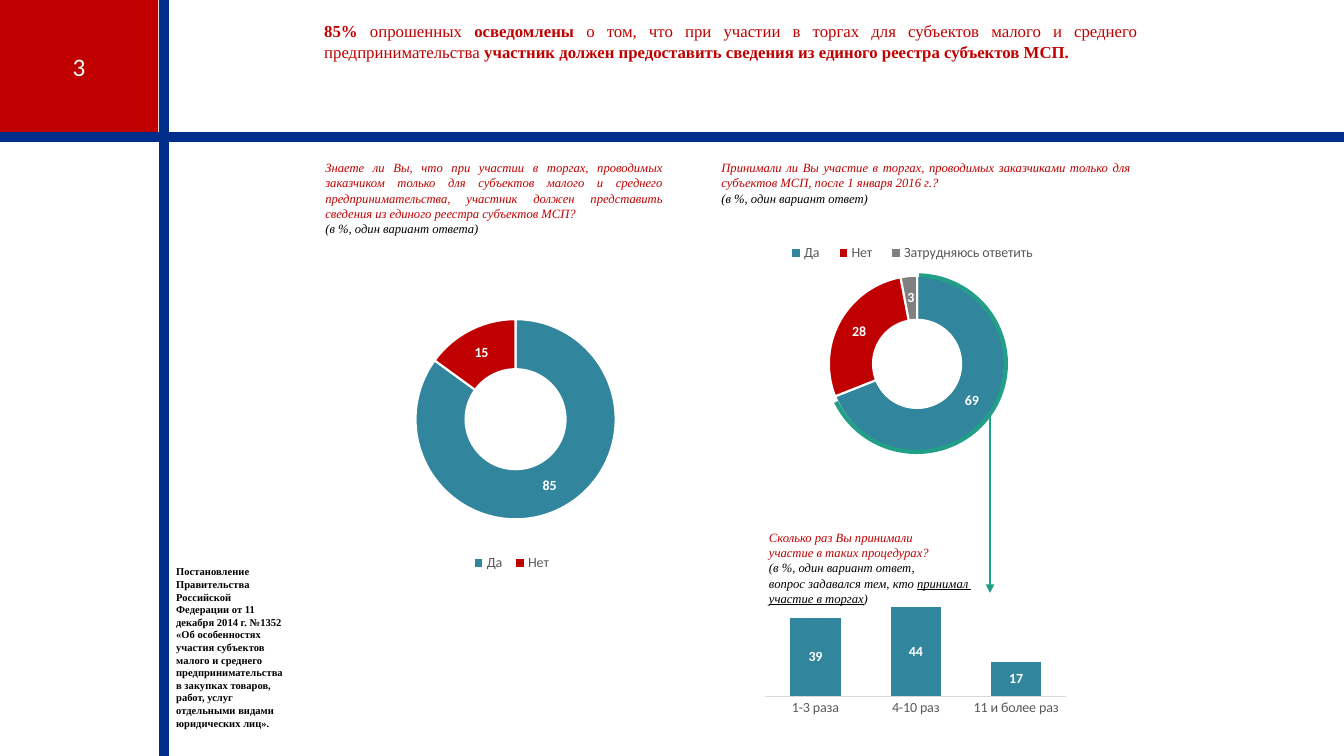
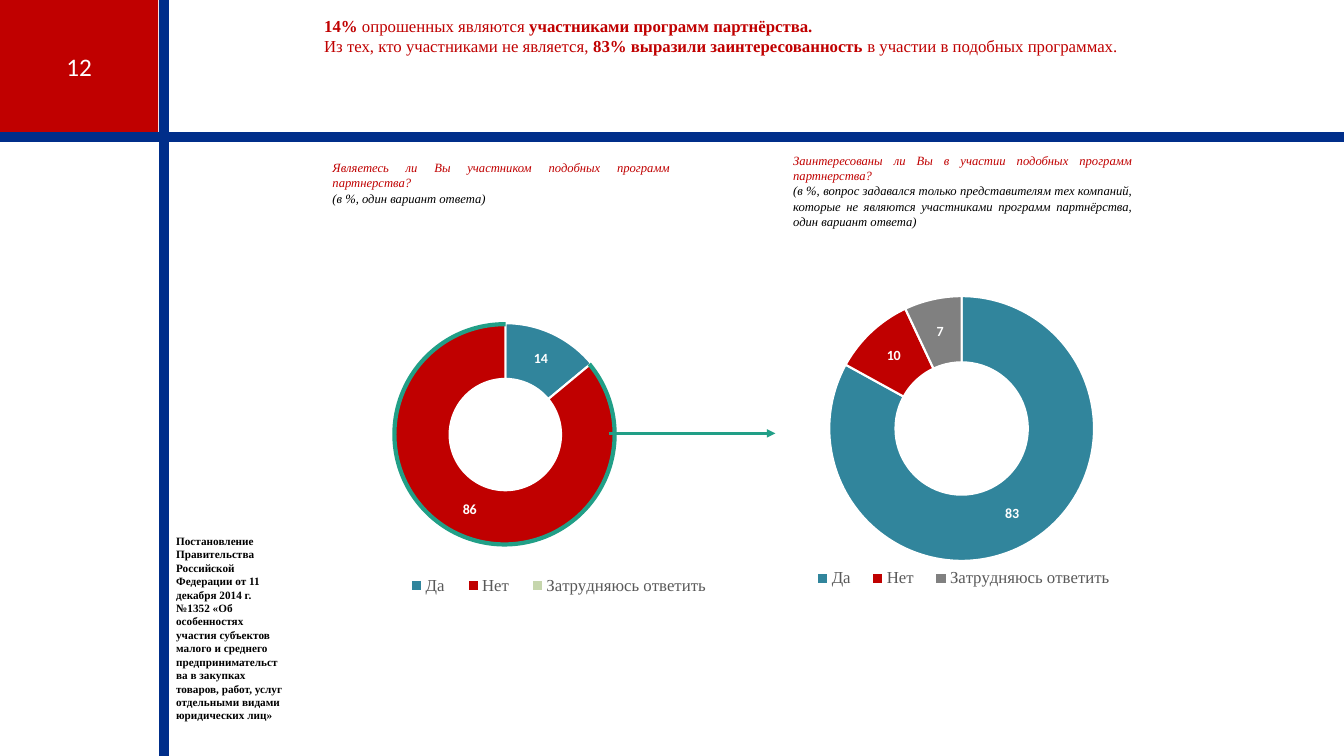
from pptx import Presentation
from pptx import util as u
from pptx.chart import data as chart_data
from pptx.dml import color
from pptx.enum import chart as chart_enum
from pptx.enum import shapes, text
from pptx.oxml import ns, parse_xml

COLOURS = {
    "red": "C00000", "blue": "002E8A", "teal": "31859C", "green": "219F87",
    "grey": "808080", "pale": "C6D6AD", "label": "595959", "axis": "D9D9D9",
    "white": "FFFFFF", "black": "000000",
}
SERIF, SANS = "Times New Roman", "Calibri"
WIDTH, HEIGHT = 33.87, 19.05
BAND_X, BAND_Y = 4.14, 3.45
ANSWERS = ("Да", "Нет", "Затрудняюсь ответить")
ONE_ANSWER = "(в %, один вариант ответа)"
DECREE = (
    "Постановление Правительства Российской Федерации от 11 декабря 2014 г. "
    "№1352 «Об особенностях участия субъектов малого и среднего "
    "предпринимательства в закупках товаров, работ, услуг отдельными видами "
    "юридических лиц»"
)


def rgb(name):
    return color.RGBColor.from_string(COLOURS[name])


def cm(values):
    return [u.Cm(value) for value in values]


def style_font(font, name, size, colour, bold=False):
    font.name, font.size, font.bold = name, u.Pt(size), bold
    font.color.rgb = rgb(colour)


def fill_solid(fill, colour):
    fill.solid()
    fill.fore_color.rgb = rgb(colour)


def style_line(line, colour, width):
    line.color.rgb = rgb(colour)
    line.width = u.Pt(width)


def add_text(slide, box, paras, size, align=text.PP_ALIGN.JUSTIFY, italic=False):
    """Each paragraph is a list of (words, colour, marks); marks hold b and u."""
    shape = slide.shapes.add_textbox(*cm(box))
    frame = shape.text_frame
    frame.word_wrap = True
    frame.auto_size = text.MSO_AUTO_SIZE.SHAPE_TO_FIT_TEXT
    for index, spans in enumerate(paras):
        para = frame.add_paragraph() if index else frame.paragraphs[0]
        para.alignment = align
        for words, colour, marks in spans:
            span = para.add_run()
            span.text = words
            style_font(span.font, SERIF, size, colour, "b" in marks)
            span.font.italic = italic
            span.font.underline = "u" in marks


def add_line(slide, start, end, colour, width, arrow=False):
    line = slide.shapes.add_connector(
        shapes.MSO_CONNECTOR.STRAIGHT, *cm(start), *cm(end))
    style_line(line.line, colour, width)
    properties = line.element.xpath("p:spPr")[0]
    if arrow:
        properties.find(ns.qn("a:ln")).append(parse_xml(
            f'<a:tailEnd {ns.nsdecls("a")} type="triangle"/>'))
    properties.append(parse_xml(f'<a:effectLst {ns.nsdecls("a")}/>'))


def add_frame(slide, number):
    """Number block and the two crossing bands."""
    block = slide.shapes.add_shape(
        shapes.MSO_SHAPE.RECTANGLE, *cm((0, 0, 3.99, 3.35)))
    block.shadow.inherit = False
    fill_solid(block.fill, "red")
    block.line.fill.background()
    block.text_frame.vertical_anchor = text.MSO_ANCHOR.MIDDLE
    para = block.text_frame.paragraphs[0]
    para.alignment = text.PP_ALIGN.CENTER
    span = para.add_run()
    span.text = number
    style_font(span.font, SANS, 18, "white")
    add_line(slide, (BAND_X, 0), (BAND_X, HEIGHT), "blue", 7)
    add_line(slide, (0, BAND_Y), (WIDTH, BAND_Y), "blue", 7)


def add_headline(slide, top, paras):
    """Spans of a headline are (words, marks)."""
    add_text(slide, (7.92, top, 21.01, 1.27),
             [[(words, "red", marks) for words, marks in spans]
              for spans in paras], 12)


def add_question(slide, box, question, hint):
    add_text(slide, box, [[(question, "red", "")], [(hint, "black", "")]],
             9, italic=True)


def add_decree(slide, box, words, size):
    add_text(slide, box, [[(words, "black", "b")]], size, text.PP_ALIGN.LEFT)


def set_layout(parent, index, box, target=""):
    """Place a plot area or legend; box holds fractions of its chart."""
    for old in parent.findall(ns.qn("c:layout")):
        parent.remove(old)
    modes = "".join(f'<c:{key}Mode val="edge"/>' for key in "xy")
    values = "".join(
        f'<c:{key} val="{value}"/>' for key, value in zip("xywh", box))
    parent.insert(index, parse_xml(
        f'<c:layout {ns.nsdecls("c")}><c:manualLayout>{target}{modes}{values}'
        "</c:manualLayout></c:layout>"))


def add_chart(slide, kind, box, names, values, plot_box):
    source = chart_data.CategoryChartData(number_format="#,##0")
    source.categories = names
    source.add_series("Series 1", values)
    chart = slide.shapes.add_chart(kind, *cm(box), source).chart
    chart.has_title = False
    chart.has_legend = False
    style_font(chart.font, SANS, 10, "black")
    plot = chart.plots[0]
    plot.has_data_labels = True
    labels = plot.data_labels
    labels.show_value = True
    labels.show_percentage = False
    labels.number_format = "#,##0;;"
    labels.number_format_is_linked = False
    style_font(labels.font, SANS, 10, "white", True)
    set_layout(chart.element.xpath("c:chart/c:plotArea")[0], 0, plot_box,
               '<c:layoutTarget val="inner"/>')
    return chart


def add_doughnut(slide, box, values, plot_box, legend_box, legend_font,
                 colours=("teal", "red", "grey")):
    chart = add_chart(slide, chart_enum.XL_CHART_TYPE.DOUGHNUT, box,
                      ANSWERS[:len(values)], values, plot_box)
    plot = chart.plots[0]
    plot.vary_by_categories = True
    chart.element.xpath(".//c:holeSize")[0].set("val", "45")
    for index, colour in enumerate(colours[:len(values)]):
        point = plot.series[0].points[index].format
        fill_solid(point.fill, colour)
        style_line(point.line, "white", 1.5)
    chart.has_legend = True
    legend = chart.legend
    legend.position = chart_enum.XL_LEGEND_POSITION.BOTTOM
    legend.include_in_layout = False
    style_font(legend.font, *legend_font, "label")
    set_layout(chart.element.xpath("c:chart/c:legend")[0], 1, legend_box)


def add_columns(slide, box, names, values):
    chart = add_chart(slide, chart_enum.XL_CHART_TYPE.COLUMN_STACKED, box,
                      names, values, (0.02, 0.02, 0.96, 0.8))
    plot = chart.plots[0]
    plot.vary_by_categories = False
    plot.gap_width = plot.overlap = 100
    plot.data_labels.position = chart_enum.XL_LABEL_POSITION.CENTER
    fill_solid(plot.series[0].format.fill, "teal")
    chart.value_axis.visible = False
    chart.value_axis.has_major_gridlines = False
    chart.value_axis.minimum_scale = 0
    chart.value_axis.maximum_scale = 50
    axis = chart.category_axis
    axis.major_tick_mark = chart_enum.XL_TICK_MARK.NONE
    style_font(axis.tick_labels.font, SANS, 10, "label")
    style_line(axis.format.line, "axis", 0.75)


def add_callout(slide, box, ring, angles, start, end):
    """Outline one slice of the chart in box and lead an arrow away from it."""
    left, top = box[:2]
    add_line(slide, (left + start[0], top + start[1]),
             (left + end[0], top + end[1]), "green", 2, arrow=True)
    x, y, width, height = ring
    arc = slide.shapes.add_shape(
        shapes.MSO_SHAPE.ARC, *cm((left + x, top + y, width, height)))
    arc.shadow.inherit = False
    arc.fill.background()
    style_line(arc.line, "green", 3)
    for index, angle in enumerate(angles):
        arc.adjustments[index] = angle * 0.6


def build_awareness(slide):
    add_frame(slide, "3")
    add_headline(slide, 0.41, [[
        ("85%", "b"), (" опрошенных ", ""), ("осведомлены", "b"),
        (" о том, что при участии в торгах для субъектов малого и среднего "
         "предпринимательства ", ""),
        ("участник должен предоставить сведения из единого реестра "
         "субъектов МСП.", "b")]])
    add_doughnut(slide, (7.95, 7.67, 9.7, 7.24), (85, 15),
                 (0.26, 0.05, 0.52, 0.7), (0.39, 0.85, 0.24, 0.1), (SANS, 10))
    participation = (18.75, 5.87, 8.23, 6.35)
    add_doughnut(slide, participation, (69, 28, 3),
                 (0.26, 0.16, 0.54, 0.72), (0.1, 0.02, 0.83, 0.12), (SANS, 10))
    add_columns(slide, (19.13, 14.94, 7.9, 3.18),
                ("1-3 раза", "4-10 раз", "11 и более раз"), (39, 44, 17))
    add_callout(slide, participation, (2.1, 1.07, 4.5, 4.45), (271.6, 154.6),
                (6.2, 4.45), (6.2, 9.07))
    add_question(
        slide, (7.95, 3.91, 8.99, 2.18),
        "Знаете ли Вы, что при участии в торгах, проводимых заказчиком только "
        "для субъектов малого и среднего предпринимательства, участник должен "
        "представить сведения из единого реестра субъектов МСП?", ONE_ANSWER)
    add_question(
        slide, (17.93, 3.91, 10.8, 1.42),
        "Принимали ли Вы участие в торгах, проводимых заказчиками только для "
        "субъектов МСП, после 1 января 2016 г.?", "(в %, один вариант ответ)")
    add_text(slide, (19.13, 13.23, 11, 2.18), [
        [("Сколько раз Вы принимали", "red", "")],
        [("участие в таких процедурах?", "red", "")],
        [("(в %, один вариант ответ,", "black", "")],
        [("вопрос задавался тем, кто ", "black", ""),
         ("принимал ", "black", "u")],
        [("участие в торгах", "black", "u"), (")", "black", "")],
    ], 9, text.PP_ALIGN.LEFT, italic=True)
    add_decree(slide, (4.19, 14.12, 3.23, 4.42), DECREE + ".", 7.5)


def build_partnership(slide):
    add_frame(slide, "12")
    add_headline(slide, 0.28, [
        [("14% ", "b"), ("опрошенных являются ", ""),
         ("участниками программ партнёрства.", "b")],
        [("Из тех, кто участниками не является, ", ""),
         ("83% выразили заинтересованность ", "b"),
         ("в участии в подобных программах.", "")]])
    membership = (8.74, 7.14, 10.8, 8.2)
    add_doughnut(slide, membership, (14, 86, 0),
                 (0.11, 0.12, 0.52, 0.69), (0.11, 0.88, 0.77, 0.1), (SERIF, 12),
                 ("teal", "red", "pale"))
    add_doughnut(slide, (19.18, 7.11, 10.11, 8.2), (83, 10, 7),
                 (0.17, 0.04, 0.66, 0.82), (0.1, 0.86, 0.81, 0.1), (SERIF, 12))
    add_callout(slide, membership, (1.2, 1.03, 5.55, 5.55), (320.3, 270.6),
                (6.6, 3.78), (10.8, 3.78))
    add_question(
        slide, (8.13, 3.91, 8.99, 1.42),
        "Являетесь ли Вы участником подобных программ партнерства?", ONE_ANSWER)
    add_question(
        slide, (19.74, 3.73, 9.03, 2.18),
        "Заинтересованы ли Вы в участии подобных программ партнерства?",
        "(в %, вопрос задавался только представителям тех компаний, которые не "
        "являются участниками программ партнёрства, один вариант ответа)")
    add_decree(slide, (4.19, 13.34, 3.2, 5.38), DECREE, 8)


def main():
    deck = Presentation()
    deck.slide_width, deck.slide_height = cm((WIDTH, HEIGHT))
    for build in (build_awareness, build_partnership):
        build(deck.slides.add_slide(deck.slide_layouts[6]))
    deck.save("out.pptx")


if __name__ == "__main__":
    main()
